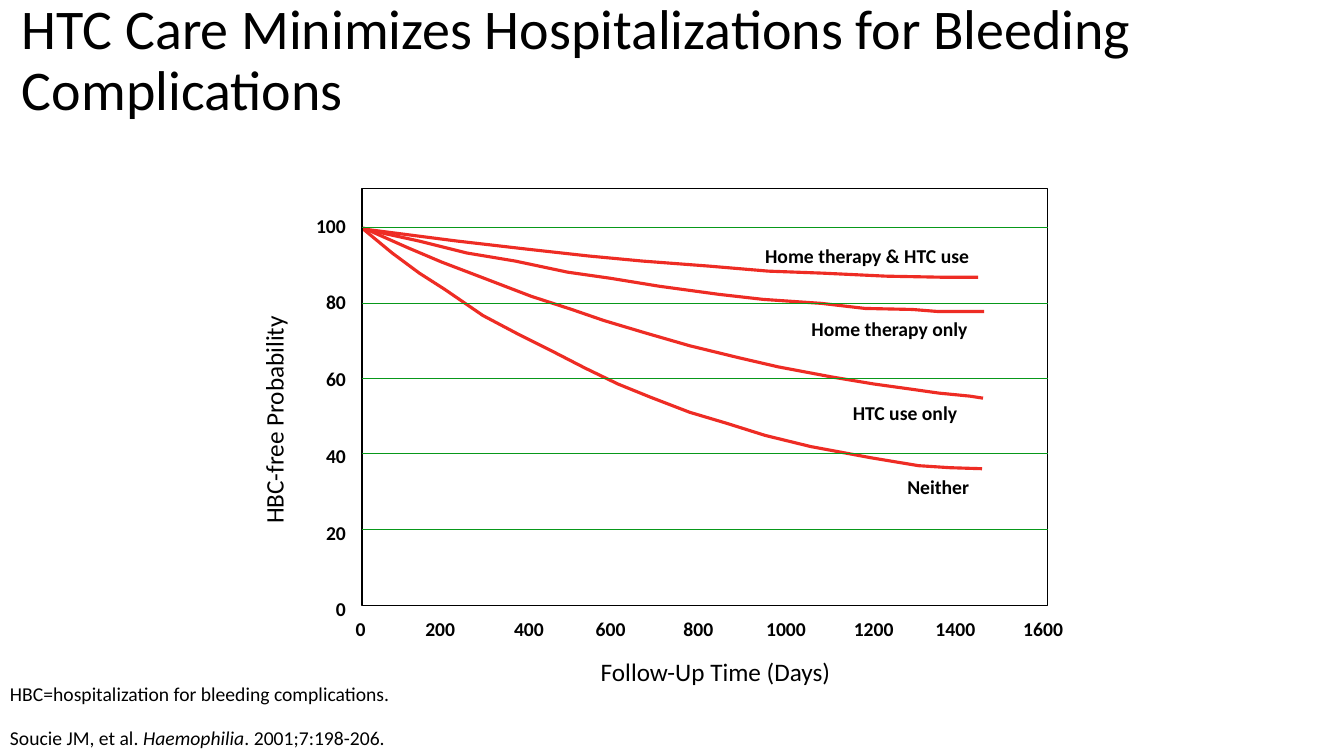
from lxml.etree import SubElement
from pptx import Presentation
from pptx.dml.color import RGBColor
from pptx.enum.shapes import MSO_CONNECTOR, MSO_SHAPE
from pptx.enum.text import MSO_ANCHOR, MSO_AUTO_SIZE, PP_ALIGN
from pptx.oxml.ns import qn
from pptx.util import Inches, Pt

COLORS = {"text": "000000", "frame": "000000", "grid": "08981A", "curve": "EE2C24"}
FONT = "Calibri"

# Plot area in inches
PLOT_LEFT, PLOT_TOP, PLOT_WIDTH, PLOT_HEIGHT = 3.59, 1.87, 6.8, 4.14
GRID_TOP, GRID_STEP = 2.26, 0.7475
AXIS_TABS = [0.69, 1.57, 2.38, 3.25, 4.07, 4.94, 5.75, 6.62]

# Survival curves as slide positions in inches
CURVES = {
    "Home therapy & HTC use": [
        (3.59, 2.27), (4.52, 2.39), (5.21, 2.47), (5.84, 2.54), (6.37, 2.59), (7.03, 2.64),
        (7.62, 2.69), (8.16, 2.71), (8.79, 2.74), (9.33, 2.75), (9.7, 2.75)],
    "Home therapy only": [
        (3.6, 2.27), (4.15, 2.39), (4.63, 2.51), (5.11, 2.59), (5.63, 2.7), (6.05, 2.76),
        (6.54, 2.84), (7.13, 2.92), (7.57, 2.97), (8.15, 3.01), (8.58, 3.06), (9.05, 3.07),
        (9.3, 3.09), (9.76, 3.09)],
    "HTC use only": [
        (3.6, 2.26), (4.05, 2.46), (4.38, 2.6), (4.8, 2.76), (5.27, 2.94), (5.67, 3.07),
        (5.99, 3.18), (6.39, 3.3), (6.84, 3.43), (7.33, 3.55), (7.72, 3.64), (8.25, 3.74),
        (8.67, 3.81), (9.03, 3.86), (9.31, 3.9), (9.62, 3.93), (9.75, 3.95)],
    "Neither": [
        (3.6, 2.27), (3.89, 2.51), (4.16, 2.71), (4.41, 2.87), (4.79, 3.13), (5.13, 3.31),
        (5.47, 3.48), (5.8, 3.65), (6.13, 3.81), (6.45, 3.94), (6.84, 4.09), (7.21, 4.2),
        (7.59, 4.32), (8.04, 4.43), (8.63, 4.54), (9.11, 4.62), (9.42, 4.64), (9.74, 4.65)],
}

# Left, top and width of each curve's label
CURVE_LABELS = {
    "Home therapy & HTC use": (7.49, 2.37, 2.24),
    "Home therapy only": (7.95, 3.09, 1.76),
    "HTC use only": (8.36, 3.93, 1.24),
    "Neither": (8.9, 4.66, 0.82),
}


def color(name):
    return RGBColor.from_string(COLORS[name])


def set_line(shape, name, width):
    shape.line.color.rgb = color(name)
    shape.line.width = Pt(width)


def add_text(slide, lines, box, size, bold=False, wrap=False, inset=0.05,
             align=None, space_after=None, tabs=()):
    """Each line is a list of (text, italic) runs."""
    shape = slide.shapes.add_textbox(*[Inches(length) for length in box])
    frame = shape.text_frame
    frame.word_wrap = wrap
    frame.auto_size = MSO_AUTO_SIZE.SHAPE_TO_FIT_TEXT
    frame.margin_top = frame.margin_bottom = Inches(inset)
    for index, runs in enumerate(lines):
        paragraph = frame.add_paragraph() if index else frame.paragraphs[0]
        if tabs:
            tab_list = SubElement(paragraph._p.get_or_add_pPr(), qn("a:tabLst"))
            for position in tabs:
                SubElement(tab_list, qn("a:tab"), pos=str(Inches(position)), algn="l")
        paragraph.font.name = FONT
        paragraph.font.size = Pt(size)
        paragraph.font.bold = bold
        paragraph.font.color.rgb = color("text")
        if align is not None:
            paragraph.alignment = align
        if space_after is not None:
            paragraph.space_after = Pt(space_after)
        for text, italic in runs:
            run = paragraph.add_run()
            run.text = text
            if italic:
                run.font.italic = True
    return shape


def add_label(slide, text, box, size, **options):
    return add_text(slide, [[(text, False)]], box, size, **options)


def add_curve(slide, points):
    start, *rest = [(Inches(x), Inches(y)) for x, y in points]
    builder = slide.shapes.build_freeform(*start)
    builder.add_line_segments(rest, close=False)
    curve = builder.convert_to_shape()
    curve.shadow.inherit = False
    curve.fill.background()
    set_line(curve, "curve", 2.25)


def add_plot_frame(slide):
    frame = slide.shapes.add_shape(
        MSO_SHAPE.RECTANGLE, Inches(PLOT_LEFT), Inches(PLOT_TOP),
        Inches(PLOT_WIDTH), Inches(PLOT_HEIGHT))
    frame.shadow.inherit = False
    frame.fill.background()
    set_line(frame, "frame", 1)


def add_grid_line(slide, y):
    line = slide.shapes.add_connector(
        MSO_CONNECTOR.STRAIGHT, Inches(PLOT_LEFT), Inches(y),
        Inches(PLOT_LEFT + PLOT_WIDTH), Inches(y))
    set_line(line, "grid", 0.5)
    SubElement(line._element.spPr, qn("a:effectLst"))


def main():
    presentation = Presentation()
    presentation.slide_width = Inches(13.33)
    presentation.slide_height = Inches(7.5)
    slide = presentation.slides.add_slide(presentation.slide_layouts[6])

    # Title
    title = add_label(slide, "HTC Care Minimizes Hospitalizations for Bleeding Complications",
                      (0.12, 0.11, 11.83, 1.01), 40, wrap=True)
    title.text_frame.auto_size = MSO_AUTO_SIZE.NONE
    title.text_frame.vertical_anchor = MSO_ANCHOR.MIDDLE
    title.text_frame.paragraphs[0].line_spacing = 0.9

    # Citation and abbreviation
    citation = [("Soucie JM, et al. ", False), ("Haemophilia", True), (". 2001;7:198-206.", False)]
    add_text(slide, [citation], (0, 7.1, 6.25, 0.44), 14, wrap=True, inset=0.1)
    add_label(slide, "HBC=hospitalization for bleeding complications.",
              (0, 6.67, 6.25, 0.44), 14, wrap=True, inset=0.1)

    # Curves, frame and grid
    for points in CURVES.values():
        add_curve(slide, points)
    add_plot_frame(slide)
    for row in range(5):
        add_grid_line(slide, GRID_TOP + row * GRID_STEP)

    # Axis values
    days = "\t".join(str(day) for day in range(0, 1601, 200))
    add_label(slide, days, (3.43, 6.07, 7.33, 0.34), 14, bold=True, tabs=AXIS_TABS)
    probabilities = [[(str(value), False)] for value in range(100, -1, -20)]
    add_text(slide, probabilities, (3.03, 2.07, 0.5, 4.18), 14, bold=True,
             align=PP_ALIGN.RIGHT, space_after=38)

    # Axis titles
    add_label(slide, "Follow-Up Time (Days)", (5.86, 6.46, 2.51, 0.4), 18)
    axis_title = add_label(slide, "HBC-free Probability", (1.57, 3.95, 2.29, 0.4), 18)
    axis_title.rotation = 270

    # Curve labels
    for text, (left, top, width) in CURVE_LABELS.items():
        add_label(slide, text, (left, top, width, 0.34), 14, bold=True)

    presentation.save("out.pptx")


if __name__ == "__main__":
    main()
